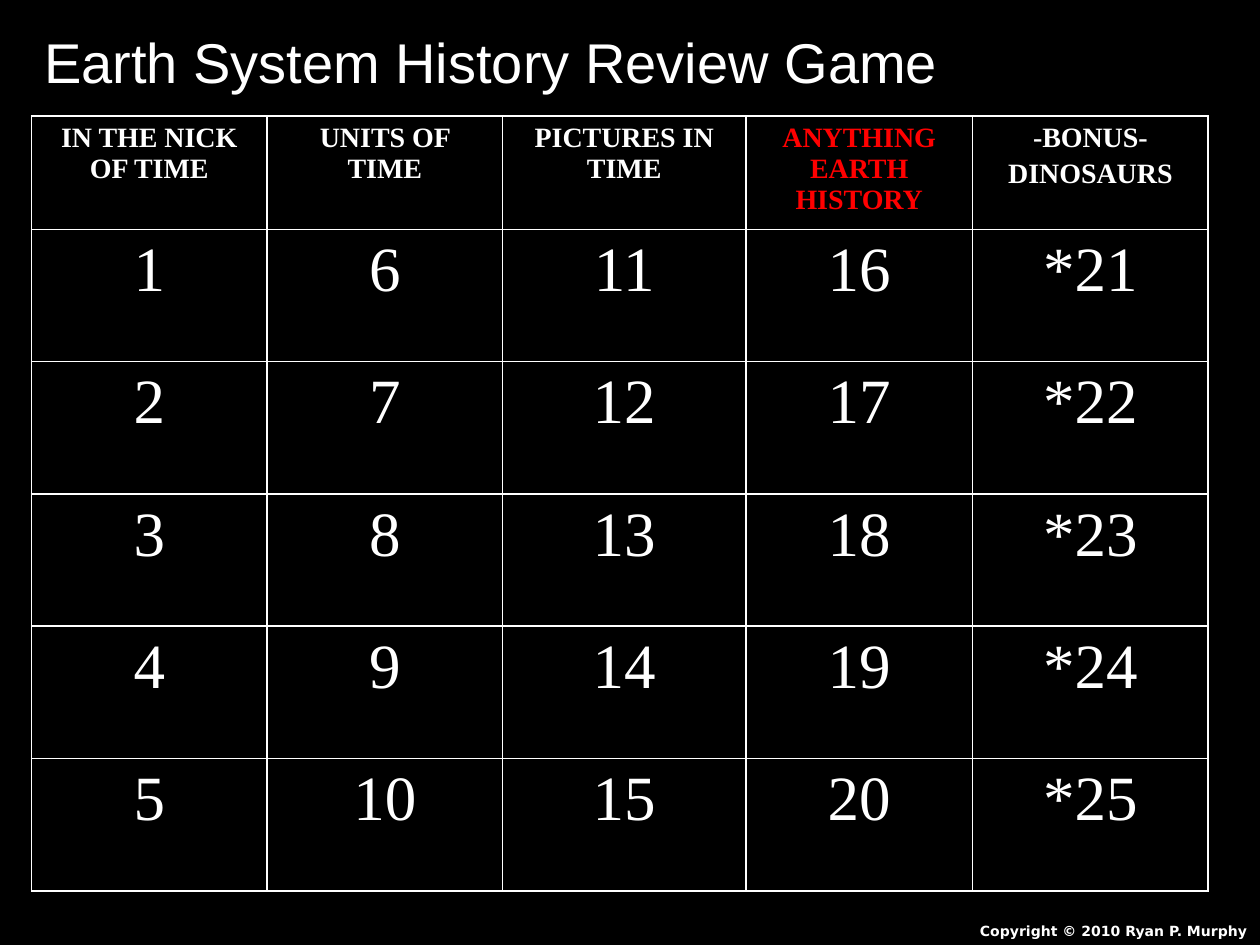
from dataclasses import dataclass

from lxml import etree
from pptx import Presentation
from pptx import util as u
from pptx.dml.color import RGBColor
from pptx.enum import text
from pptx.oxml import ns


@dataclass(frozen=True)
class Theme:
    back: str = "000000"
    ink: str = "FFFFFF"
    hot: str = "FF0000"
    sans: str = "Arial"
    serif: str = "Times New Roman"
    small: str = "DejaVu Sans"
    title: int = 32
    head: int = 16
    num: int = 36
    note: int = 8
    rule: int = 1


T = Theme()
ALIGN = text.PP_ALIGN
HEADS = [
    "IN THE NICK OF TIME",
    "UNITS OF TIME",
    "PICTURES IN TIME",
    "ANYTHING EARTH HISTORY",
    "-BONUS-\nDINOSAURS",
]
HOT = 3
BONUS = 4
ROWS = 5
WIDTHS = [1.87, 1.87, 1.93, 1.8, 1.87]
HEIGHTS = [0.9] + [1.05] * ROWS


def paint(fill, color):
    fill.solid()
    fill.fore_color.rgb = RGBColor.from_string(color)


def style(frame, face, size, color=T.ink, bold=False, align=ALIGN.LEFT):
    for i, para in enumerate(frame.paragraphs):
        para.alignment = align
        para.space_before = u.Pt(0.2 * size if i else 0)
        font = para.font
        font.name, font.size, font.bold = face, u.Pt(size), bold
        font.color.rgb = RGBColor.from_string(color)


def place(shape, box):
    shape.left, shape.top, shape.width, shape.height = map(u.Inches, box)


def edge(cell):
    props = cell._tc.get_or_add_tcPr()
    for i, side in enumerate("LRTB"):
        line = etree.Element(ns.qn(f"a:ln{side}"), w=str(u.Pt(T.rule)))
        fill = etree.SubElement(line, ns.qn("a:solidFill"))
        etree.SubElement(fill, ns.qn("a:srgbClr"), val=T.ink)
        props.insert(i, line)


def title(slide, box):
    shape = slide.shapes.title
    place(shape, box)
    frame = shape.text_frame
    frame.text = "Earth System History Review Game"
    frame.auto_size = text.MSO_AUTO_SIZE.NONE
    frame.vertical_anchor = text.MSO_ANCHOR.TOP
    style(frame, T.sans, T.title)


def label(row, col):
    if row == 0:
        return HEADS[col]
    star = "*" if col == BONUS else ""
    return f"{star}{col * ROWS + row}"


def board(slide, box):
    grid = slide.shapes.add_table(
        len(HEIGHTS), len(WIDTHS), *map(u.Inches, box)).table
    for col, wide in zip(grid.columns, WIDTHS):
        col.width = u.Inches(box[2] * wide / sum(WIDTHS))
    for row, high in zip(grid.rows, HEIGHTS):
        row.height = u.Inches(box[3] * high / sum(HEIGHTS))
    for r in range(len(HEIGHTS)):
        for c in range(len(WIDTHS)):
            cell = grid.cell(r, c)
            cell.text = label(r, c)
            paint(cell.fill, T.back)
            edge(cell)
            top = r == 0
            style(cell.text_frame, T.serif, T.head if top else T.num,
                  T.hot if top and c == HOT else T.ink, top, ALIGN.CENTER)


def note(slide, box):
    frame = slide.shapes.add_textbox(*map(u.Inches, box)).text_frame
    frame.word_wrap = True
    frame.text = "Copyright © 2010 Ryan P. Murphy"
    style(frame, T.small, T.note, bold=True, align=ALIGN.RIGHT)


def main():
    deck = Presentation()
    wide, high = 10, 7.5
    deck.slide_width, deck.slide_height = u.Inches(wide), u.Inches(high)
    slide = deck.slides.add_slide(deck.slide_layouts[5])
    paint(slide.background.fill, T.back)
    left = 0.25
    title(slide, (left, 0.17, wide - left, 0.63))
    board(slide, (left, 0.92, sum(WIDTHS), sum(HEIGHTS)))
    note(slide, (wide - 2.92, high - 0.23, 2.92, 0.23))
    deck.save("out.pptx")


if __name__ == "__main__":
    main()
